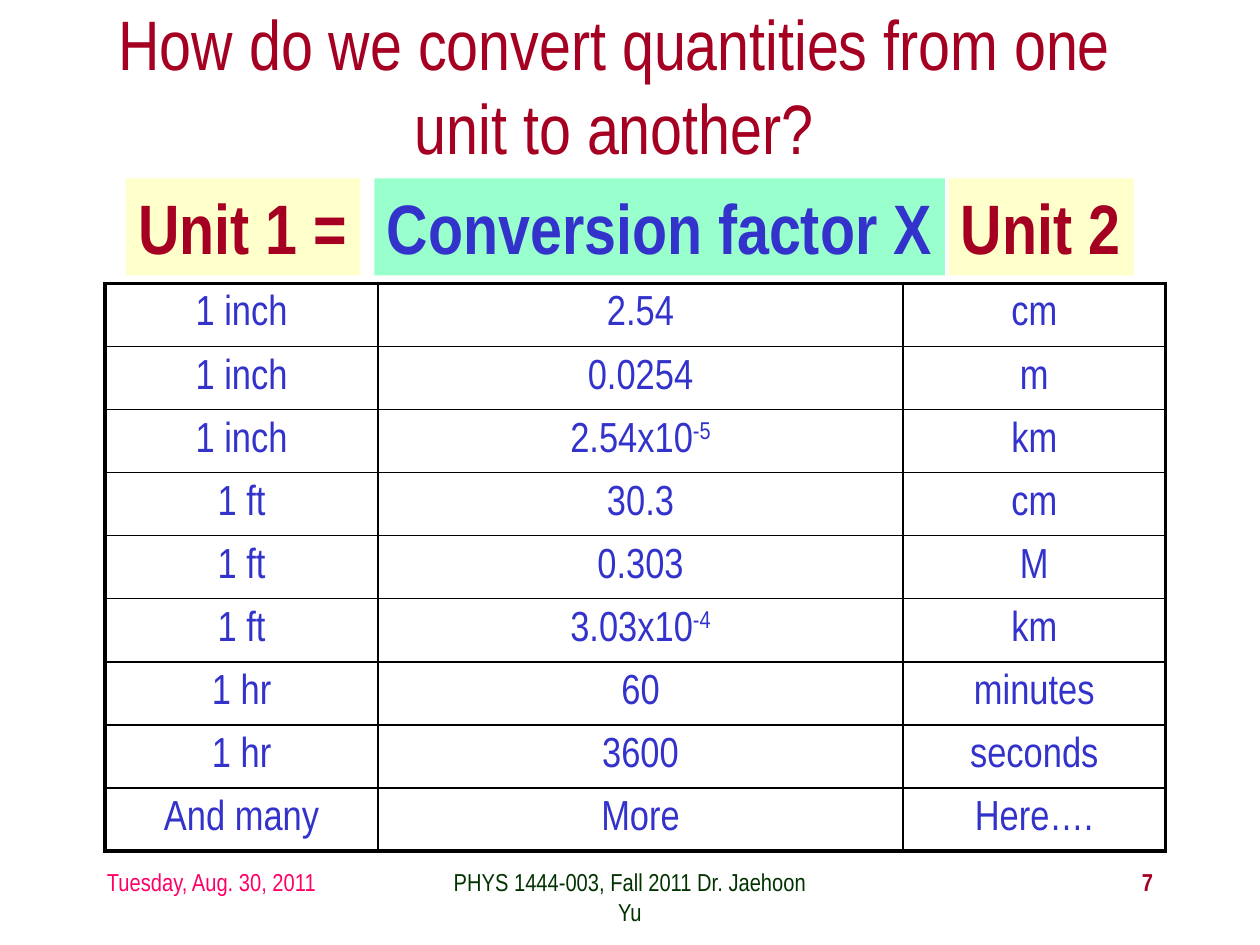
from dataclasses import dataclass

from lxml import etree
from pptx import Presentation
from pptx.dml.color import RGBColor
from pptx.enum.shapes import MSO_SHAPE
from pptx.enum.text import MSO_ANCHOR, PP_ALIGN
from pptx.oxml.ns import qn
from pptx.util import Pt

LEFT, MID, RIGHT = PP_ALIGN.LEFT, PP_ALIGN.CENTER, PP_ALIGN.RIGHT
TOP, CENTER = MSO_ANCHOR.TOP, MSO_ANCHOR.MIDDLE
RECT = MSO_SHAPE.RECTANGLE


@dataclass(frozen=True)
class Theme:
    face: str = "Arial Narrow"
    red: str = "A50021"
    blue: str = "3333CC"
    pink: str = "FF0066"
    green: str = "003300"
    cream: str = "FFFFCC"
    mint: str = "99FFCC"
    black: str = "000000"
    big: float = 40
    body: float = 24
    small: float = 14
    thick: float = 2.25
    thin: float = 1


@dataclass(frozen=True)
class Label:
    text: str
    left: float
    top: float
    width: float
    height: float
    size: float
    color: str
    align: PP_ALIGN = LEFT
    bold: bool = False
    fill: str = ""
    anchor: MSO_ANCHOR = TOP


T = Theme()

# Title and footer
FOOT = 492
LABELS = [
    Label("Tuesday, Aug. 30, 2011", 54, FOOT, 150, 36, T.small, T.pink),
    Label("PHYS 1444-003, Fall 2011 Dr. Jaehoon Yu", 246, FOOT, 228, 36,
          T.small, T.green, MID),
    Label("7", 516, FOOT, 150, 36, T.small, T.red, RIGHT, True),
    Label("How do we convert quantities from one unit to another?",
          54, 0, 594, 96, T.big, T.red, MID, anchor=CENTER),
]

# Headings above the table columns
HEAD = 102
LABELS += [
    Label(text, left, HEAD, width, 55.4, T.big, color, LEFT, True, fill, CENTER)
    for text, left, width, color, fill in [
        ("Unit 1 =", 72, 134, T.red, T.cream),
        ("Unit 2", 542, 106, T.red, T.cream),
        ("Conversion factor X", 214, 326, T.blue, T.mint),
    ]
]

# Table: a caret marks the start of an exponent
COLS = [156, 300, 150]
ROW = 36
ROWS = [
    ("1 inch", "2.54", "cm"),
    ("1 inch", "0.0254", "m"),
    ("1 inch", "2.54x10^-5", "km"),
    ("1 ft", "30.3", "cm"),
    ("1 ft", "0.303", "M"),
    ("1 ft", "3.03x10^-4", "km"),
    ("1 hr", "60", "minutes"),
    ("1 hr", "3600", "seconds"),
    ("And many", "More", "Here…."),
]


def style(run, size: float, color: str, bold: bool = False) -> None:
    font = run.font
    font.name, font.size, font.bold = T.face, Pt(size), bold
    font.color.rgb = RGBColor.from_string(color)


def draw_label(slide, item: Label) -> None:
    box = [Pt(n) for n in (item.left, item.top, item.width, item.height)]
    if item.fill:
        shape = slide.shapes.add_shape(RECT, *box)
        shape.shadow.inherit = False
        shape.fill.solid()
        shape.fill.fore_color.rgb = RGBColor.from_string(item.fill)
        shape.line.fill.background()
    else:
        shape = slide.shapes.add_textbox(*box)
    frame = shape.text_frame
    frame.text = item.text
    frame.word_wrap = not item.fill
    frame.vertical_anchor = item.anchor
    para = frame.paragraphs[0]
    para.alignment = item.align
    style(para.runs[0], item.size, item.color, item.bold)


def add_edge(cell, side: str, width: float) -> None:
    props = cell._tc.get_or_add_tcPr()
    line = etree.SubElement(props, qn(f"a:ln{side}"), w=str(Pt(width)))
    fill = etree.SubElement(line, qn("a:solidFill"))
    etree.SubElement(fill, qn("a:srgbClr"), val=T.black)


def fill_cell(cell, text: str) -> None:
    base, _, power = text.partition("^")
    cell.text_frame.text = base
    cell.vertical_anchor = CENTER
    para = cell.text_frame.paragraphs[0]
    para.alignment = MID
    if power:
        run = para.add_run()
        run.text = power
        run.font._element.set("baseline", "30000")
    for run in para.runs:
        style(run, T.body, T.blue)


def draw_table(slide) -> None:
    count, wide = len(ROWS), len(COLS)
    table = slide.shapes.add_table(
        count, wide, Pt(60), Pt(162), Pt(sum(COLS)), Pt(ROW * count)).table
    table.first_row = table.horz_banding = False
    for col, width in zip(table.columns, COLS):
        col.width = Pt(width)
    for r, texts in enumerate(ROWS):
        table.rows[r].height = Pt(ROW)
        for c, text in enumerate(texts):
            cell = table.cell(r, c)
            fill_cell(cell, text)
            outer = {"L": c == 0, "R": c == wide - 1,
                     "T": r == 0, "B": r == count - 1}
            for side, edge in outer.items():
                add_edge(cell, side, T.thick if edge else T.thin)
            cell.fill.background()


def main() -> None:
    deck = Presentation()
    deck.slide_width, deck.slide_height = Pt(720), Pt(540)
    slide = deck.slides.add_slide(deck.slide_layouts[6])
    for item in LABELS:
        draw_label(slide, item)
    draw_table(slide)
    deck.save("out.pptx")


if __name__ == "__main__":
    main()
